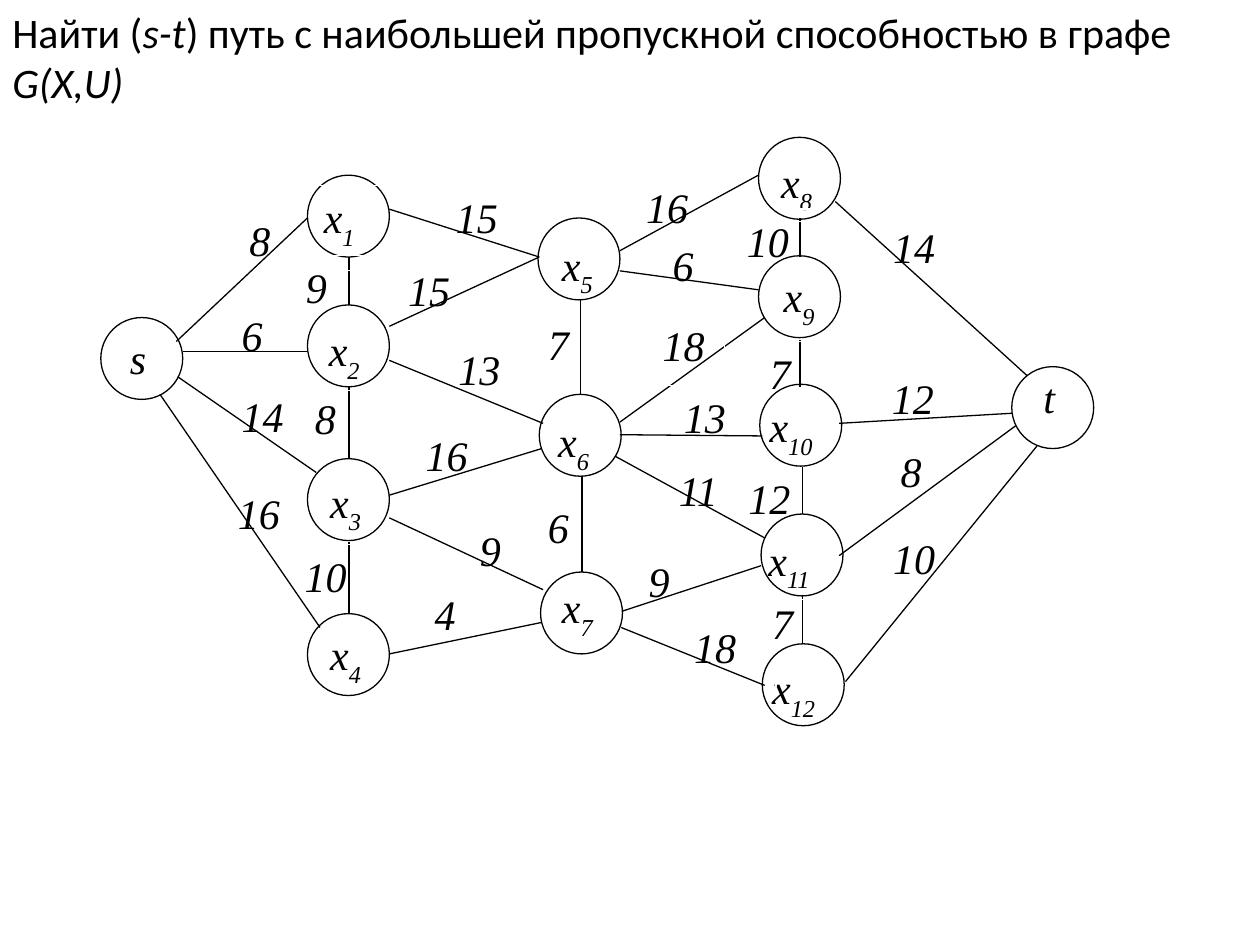
from dataclasses import dataclass

from pptx import Presentation
from pptx.dml.color import RGBColor
from pptx.enum.shapes import MSO_CONNECTOR, MSO_SHAPE
from pptx.enum.text import MSO_ANCHOR, PP_ALIGN
from pptx.oxml.ns import qn
from pptx.util import Cm, Pt
from lxml.etree import SubElement


@dataclass(frozen=True)
class Theme:
    ink: RGBColor = RGBColor(0, 0, 0)
    paper: RGBColor = RGBColor(255, 255, 255)
    head: str = "Calibri"
    math: str = "Times New Roman"
    size: float = 24
    line: float = 0.75


SIDE = 0.65  # circle diameter
HIGH = 0.57  # usual label height

TITLE = [("Найти (", False), ("s-t", True),
         (") путь с наибольшей пропускной способностью в графе ", False),
         ("G(X,U)", True)]

# letter, index, circle x, y, label x, y, width, height, indent
NODES = [
    ("x", "1", 2.44, 1.39, 2.39, 1.47, 0.89, 0.68, 0.08),
    ("s", "", 0.8, 2.52, 0.7, 2.59, 0.75, HIGH, 0.23),
    ("x", "2", 2.44, 2.42, 2.43, 2.53, 0.75, HIGH, 0.08),
    ("x", "3", 2.44, 3.64, 2.44, 3.73, 0.75, HIGH, 0.08),
    ("x", "4", 2.44, 4.87, 2.44, 4.94, 0.75, 0.73, 0.08),
    ("x", "5", 4.27, 1.73, 4.28, 1.85, 0.76, 0.68, 0.08),
    ("x", "6", 4.28, 3.13, 4.25, 3.25, 0.76, 0.68, 0.08),
    ("x", "7", 4.29, 4.54, 4.28, 4.57, 0.76, HIGH, 0.08),
    ("x", "8", 6.02, 1.09, 6.02, 1.19, 0.73, HIGH, 0.08),
    ("x", "9", 6.02, 2.03, 6.04, 2.1, 0.73, HIGH, 0.08),
    ("x", "10", 6.03, 3.05, 6.01, 3.13, 0.73, HIGH, 0),
    ("x", "11", 6.04, 4.08, 6, 4.19, 0.73, HIGH, 0),
    ("x", "12", 6.05, 5.11, 6.03, 5.21, 0.73, HIGH, 0),
    ("t", "", 8.03, 2.91, 8.03, 2.9, 0.58, HIGH, 0.15),
]

# line x1, y1, x2, y2, weight, label x, y, width
COLUMNS = [  # links within the outer columns, behind the labels
    (2.77, 2.04, 2.77, 2.42, 9, 2.33, 2.03, 0.75),
    (2.77, 3.07, 2.77, 3.64, 8, 2.4, 3.07, 0.56),
    (2.77, 4.3, 2.77, 4.87, 10, 2.32, 4.32, 0.65),
    (6.35, 1.73, 6.35, 2.04, 10, 5.83, 1.66, 0.63),
    (6.35, 2.7, 6.35, 3.07, 7, 6.01, 2.71, 0.43),
    (6.37, 3.71, 6.37, 4.08, 12, 5.84, 3.7, 0.58),
    (6.37, 4.72, 6.37, 5.1, 7, 6.03, 4.69, 0.53),
]
ARCS = [  # all other links, in front of the labels
    (1.4, 2.71, 2.44, 1.73, 8, 1.88, 1.65, 0.38),
    (1.45, 2.79, 2.44, 2.79, 6, 1.82, 2.41, 0.57),
    (1.41, 2.99, 2.51, 3.75, 14, 1.82, 3.05, 0.62),
    (1.27, 3.13, 2.54, 4.98, 16, 1.79, 3.82, 0.65),
    (3.09, 1.66, 4.28, 2.04, 15, 3.52, 1.47, 0.75),
    (3.09, 2.59, 4.28, 2.04, 15, 3.14, 2.05, 0.64),
    (3.09, 2.86, 4.31, 3.36, 13, 3.54, 2.68, 0.58),
    (3.09, 3.93, 4.3, 3.56, 16, 3.28, 3.36, 0.64),
    (3.09, 4.11, 4.31, 4.68, 9, 3.71, 4.11, 0.54),
    (3.09, 5.19, 4.3, 4.94, 4, 3.35, 4.62, 0.58),
    (4.61, 2.38, 4.61, 3.13, 7, 4.25, 2.48, 0.6),
    (4.62, 3.78, 4.62, 4.54, 6, 4.25, 3.93, 0.6),
    (4.92, 1.99, 6.02, 1.39, 16, 5.03, 1.39, 0.76),
    (4.92, 2.15, 6.02, 2.3, 6, 5.24, 1.85, 0.53),
    (4.92, 3.45, 6.05, 3.46, 13, 5.33, 3.06, 0.61),
    (4.88, 3.62, 6.07, 4.27, 11, 5.29, 3.64, 0.61),
    (4.94, 4.85, 6.04, 4.49, 9, 5.05, 4.36, 0.57),
    (4.93, 4.98, 6.07, 5.44, 18, 5.41, 4.88, 0.75),
    (6.63, 1.6, 8.15, 2.98, 14, 6.99, 1.71, 0.75),
    (6.66, 3.36, 8.03, 3.28, 12, 6.98, 2.91, 0.65),
    (8.06, 3.38, 6.66, 4.41, 8, 7.05, 3.49, 0.59),
    (8.23, 3.54, 6.71, 5.41, 10, 6.99, 4.18, 0.58),
]
TOP = (6.07, 2.52, 4.92, 3.35, 18, 5.16, 2.49, 0.59)  # label covers its line


def scale(*vals):
    """Turn inches into lengths."""
    return [Cm(val * 2.54) for val in vals]


class Graph:
    def __init__(self, slide, theme):
        self.slide = slide
        self.theme = theme

    def adjust(self, item, values):
        for name, value in values.items():
            setattr(item, name, value)

    def stroke(self, shape, color):
        shape.line.color.rgb = color
        shape.line.width = Pt(self.theme.line)

    def add_run(self, par, text, font, italic=True):
        run = par.add_run()
        run.text = text
        self.adjust(run.font, {"name": font, "size": Pt(self.theme.size),
                               "italic": italic})
        run.font.color.rgb = self.theme.ink
        return run

    def title(self, parts, *box):
        frame = self.slide.shapes.add_textbox(*scale(*box)).text_frame
        frame.word_wrap = True
        for text, italic in parts:
            self.add_run(frame.paragraphs[0], text, self.theme.head, italic)

    def shape(self, kind, box, color):
        shape = self.slide.shapes.add_shape(kind, *scale(*box))
        shape.shadow.inherit = False
        shape.fill.background()
        self.stroke(shape, color)
        return shape

    def label(self, text, box, sub="", indent=0):
        shape = self.shape(MSO_SHAPE.RECTANGLE, box, self.theme.paper)
        frame = shape.text_frame
        self.adjust(frame, {"word_wrap": True,
                            "vertical_anchor": MSO_ANCHOR.TOP,
                            "margin_left": scale(0.1 + indent)[0]})
        par = frame.paragraphs[0]
        par.alignment = PP_ALIGN.LEFT
        self.add_run(par, text, self.theme.math)
        if sub:
            run = self.add_run(par, sub, self.theme.math)
            run._r.get_or_add_rPr().set("baseline", "-30000")

    def circle(self, x, y):
        return self.shape(MSO_SHAPE.OVAL, (x, y, SIDE, SIDE), self.theme.ink)

    def link(self, *ends):
        line = self.slide.shapes.add_connector(MSO_CONNECTOR.STRAIGHT,
                                               *scale(*ends))
        self.stroke(line, self.theme.ink)
        SubElement(line._element.spPr, qn("a:effectLst"))

    def weight(self, value, x, y, width):
        self.label(str(value), (x, y, width, HIGH))


def main():
    deck = Presentation()
    deck.slide_width, deck.slide_height = scale(10, 7.5)
    theme = Theme()
    graph = Graph(deck.slides.add_slide(deck.slide_layouts[6]), theme)

    graph.title(TITLE, 0, 0, 10, 0.91)
    first, *rest = NODES
    disc = graph.circle(*first[2:4])
    disc.fill.solid()
    disc.fill.fore_color.rgb = theme.paper
    for row in COLUMNS:
        graph.link(*row[:4])
    for name, sub, _, _, *box, indent in NODES:
        graph.label(name, box, sub, indent)
    for row in ARCS + COLUMNS:
        graph.weight(*row[4:])
    for row in rest:
        graph.circle(*row[2:4])
    for row in ARCS + [TOP]:
        graph.link(*row[:4])
    graph.weight(*TOP[4:])
    deck.save("out.pptx")


if __name__ == "__main__":
    main()
